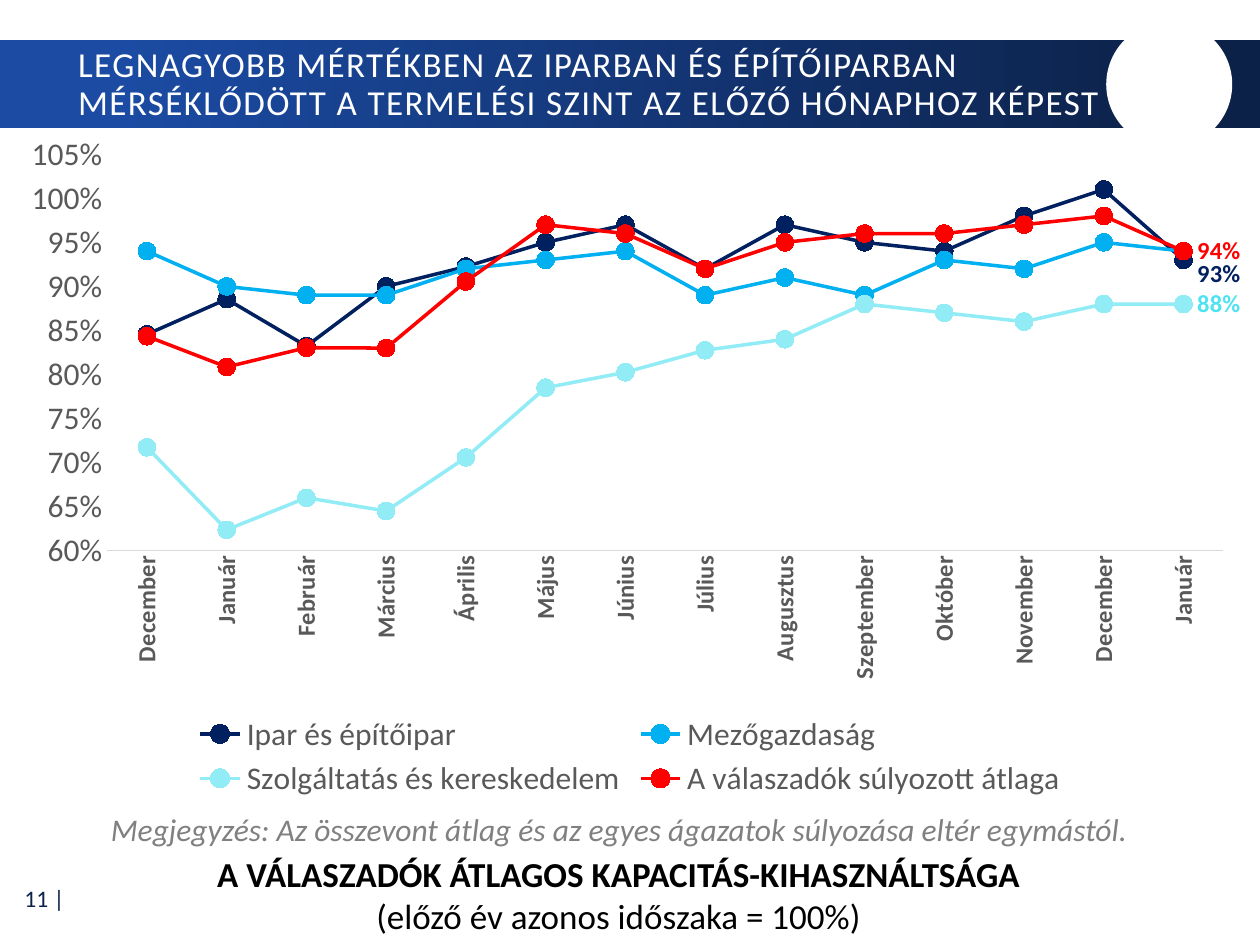
"""Build the slide on capacity use by sector."""
from pptx import Presentation
from pptx.chart.data import CategoryChartData
from pptx.dml.color import RGBColor
from pptx.enum.chart import (XL_CHART_TYPE as Kind, XL_LABEL_POSITION as Spot,
                             XL_LEGEND_POSITION as Side, XL_MARKER_STYLE as Mark,
                             XL_TICK_MARK as Tick)
from pptx.enum.shapes import MSO_SHAPE as Form
from pptx.enum.text import MSO_ANCHOR as Anchor, PP_ALIGN as Align
from pptx.oxml import parse_xml
from pptx.oxml.ns import nsdecls
from pptx.util import Inches, Pt

FONT = "Calibri"
NAVY, BLUE, WHITE, GREY = "0C2148", "1B4BA3", "FFFFFF", "595959"
TITLE = ("LEGNAGYOBB MÉRTÉKBEN AZ IPARBAN ÉS ÉPÍTŐIPARBAN MÉRSÉKLŐDÖTT "
         "A TERMELÉSI SZINT AZ ELŐZŐ HÓNAPHOZ KÉPEST")
NOTE = "Megjegyzés: Az összevont átlag és az egyes ágazatok súlyozása eltér egymástól."
HEADS = ["A VÁLASZADÓK ÁTLAGOS KAPACITÁS-KIHASZNÁLTSÁGA", "(előző év azonos időszaka = 100%)"]
MONTHS = ["December", "Január", "Február", "Március", "Április", "Május", "Június", "Július",
          "Augusztus", "Szeptember", "Október", "November", "December", "Január"]
# name, line colour, label colour, label drop, values
SERIES = [
    ("Ipar és építőipar", "002060", "002060", 0.02,
     [0.845607, 0.88553, 0.832208, 0.9, 0.92246, 0.95, 0.97,
      0.92, 0.97, 0.95, 0.94, 0.98, 1.01, 0.93]),
    ("Mezőgazdaság", "00B0F0", None, 0,
     [0.94, 0.9, 0.89, 0.89, 0.92, 0.93, 0.94,
      0.89, 0.91, 0.89, 0.93, 0.92, 0.95, 0.94]),
    ("Szolgáltatás és kereskedelem", "92ECF6", "4FE3F2", 0,
     [0.717386, 0.623688, 0.660048, 0.645, 0.705765, 0.785, 0.8025,
      0.8275, 0.84, 0.88, 0.87, 0.86, 0.88, 0.88]),
    ("A válaszadók súlyozott átlaga", "FF0000", "FF0000", 0,
     [0.843434, 0.808548, 0.83042, 0.83, 0.905578, 0.97, 0.96,
      0.92, 0.95, 0.96, 0.96, 0.97, 0.98, 0.94]),
]


def tint(text):
    return RGBColor.from_string(text)


def style(font, size, color, bold=False, italic=False):
    font.name, font.size, font.bold, font.italic = FONT, Pt(size), bold, italic
    font.color.rgb = tint(color)


def place(shape, box):
    shape.left, shape.top, shape.width, shape.height = map(Inches, box)


def write(box, lines, size, color, align, bolds=(False,), italic=False):
    shape = slide.shapes.add_textbox(*map(Inches, box))
    frame = shape.text_frame
    frame.word_wrap = True
    frame.text = "\n".join(lines)
    for para, bold in zip(frame.paragraphs, bolds):
        para.alignment = align
        style(para.runs[0].font, size, color, bold, italic)
    return frame


def shape(form, box):
    item = slide.shapes.add_shape(form, *map(Inches, box))
    item.shadow.inherit = False
    item.line.fill.background()
    return item


def layout(**parts):
    body = "".join(f'<c:{key} val="{val}"/>' for key, val in parts.items())
    return parse_xml(f'<c:layout {nsdecls("c")}><c:manualLayout>{body}</c:manualLayout></c:layout>')


def draw(box):
    data = CategoryChartData(number_format="0%")
    data.categories = MONTHS
    for name, *_, vals in SERIES:
        data.add_series(name, vals)
    chart = slide.shapes.add_chart(Kind.LINE_MARKERS, *map(Inches, box), data).chart
    style(chart.font, 18, "000000")
    chart.has_title = False
    chart.has_legend = True
    chart.legend.position = Side.BOTTOM
    chart.legend.include_in_layout = False
    style(chart.legend.font, 18, GREY)

    cat, val = chart.category_axis, chart.value_axis
    for axis, size in ((cat, 14), (val, 18)):
        axis.major_tick_mark = axis.minor_tick_mark = Tick.NONE
        axis.has_major_gridlines = False
        style(axis.tick_labels.font, size, GREY, axis is cat)
    cat.format.line.color.rgb = tint("D9D9D9")
    cat.format.line.width = Pt(0.75)
    cat._element.xpath("c:txPr/a:bodyPr")[0].set("rot", "-5400000")
    val.format.line.fill.background()
    val.minimum_scale, val.maximum_scale, val.major_unit = 0.6, 1.05, 0.05
    val.tick_labels.number_format = "0%"
    val.tick_labels.number_format_is_linked = False

    plot = chart.plots[0]
    plot.vary_by_categories = False
    for line, (_, color, ink, drop, vals) in zip(plot.series, SERIES):
        line.smooth = False
        line.format.line.color.rgb = tint(color)
        line.format.line.width = Pt(2)
        mark = line.marker
        mark.style, mark.size = Mark.CIRCLE, 10
        mark.format.fill.solid()
        mark.format.fill.fore_color.rgb = tint(color)
        mark.format.line.color.rgb = tint(color)
        if ink:
            label = line.points[len(vals) - 1].data_label
            style(label.font, 14, ink, True)
            label.position = Spot.RIGHT
            if drop:
                line._element.xpath(".//c:dLbl")[0].insert(1, layout(x=0, y=drop))

    area = chart._chartSpace.chart.plotArea
    for old in area.xpath("c:layout"):
        area.remove(old)
    area.insert(0, layout(layoutTarget="inner", xMode="edge", yMode="edge",
                          x=0.085, y=0.04, w=0.886, h=0.586))


deck = Presentation()
deck.slide_width, deck.slide_height = Inches(10), Inches(7.5)
slide = deck.slides.add_slide(deck.slide_layouts[5])

page = write((0.01, 6.94, 0.6, 0.37), ["11 |"], 13.5, NAVY, Align.RIGHT)
page.vertical_anchor = Anchor.MIDDLE

band = shape(Form.RECTANGLE, (0, 0.32, 10, 0.7))
band.fill.gradient()
band.fill.gradient_angle = 0
for stop, (spot, color) in zip(band.fill.gradient_stops, ((0.09, BLUE), (0.95, NAVY))):
    stop.position, stop.color.rgb = spot, tint(color)
disc = shape(Form.OVAL, (8.78, 0.17, 1, 1))
disc.fill.solid()
disc.fill.fore_color.rgb = tint(WHITE)

title = slide.shapes.title
place(title, (0.52, 0.34, 8.32, 0.67))
title.text_frame.text = TITLE
title.text_frame.vertical_anchor = Anchor.MIDDLE
para = title.text_frame.paragraphs[0]
para.alignment, para.line_spacing = Align.LEFT, 0.9
style(para.runs[0].font, 20, WHITE)
para.runs[0].font._element.set("spc", "80")
slide.shapes._spTree.append(title._element)

write((0.88, 6.72, 8.06, 0.77), HEADS, 20, "000000", Align.CENTER, (True, False))
write((0.35, 6.38, 9.13, 0.4), [NOTE], 18, "808080", Align.CENTER, italic=True)
draw((0, 1.01, 10, 5.37))

deck.save("out.pptx")
